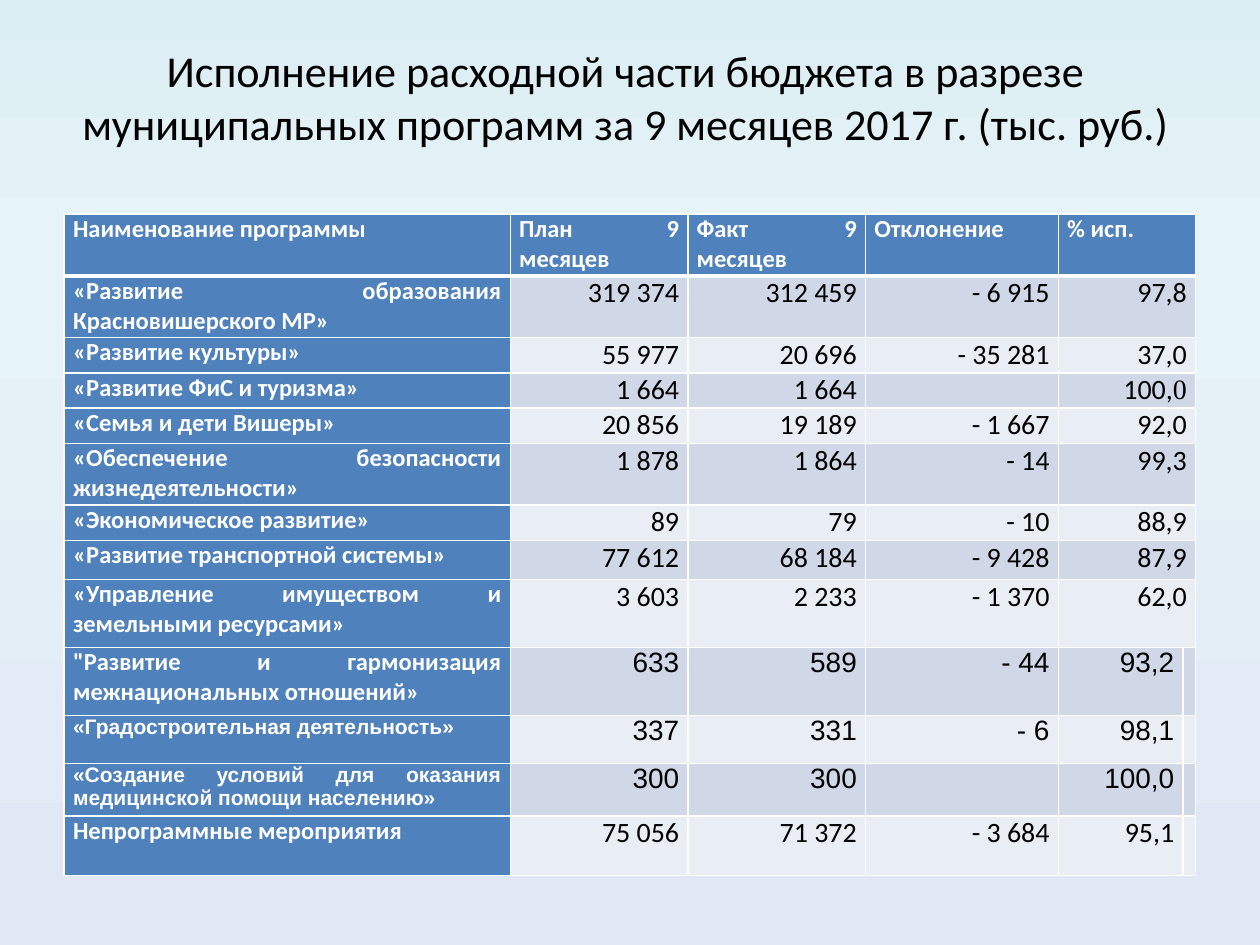
from copy import deepcopy
from pptx import Presentation
from pptx.dml.color import RGBColor
from pptx.enum.text import MSO_ANCHOR, PP_ALIGN
from pptx.oxml import parse_xml
from pptx.oxml.ns import nsdecls, qn
from pptx.util import Inches, Pt

BLUE, WHITE, BLACK = "4F81BD", "FFFFFF", "000000"
BANDS = ["E9EDF4", "D0D8E8"]


def color(value):
    return RGBColor.from_string(value)


def add_border(cell, side, width):
    cell._tc.get_or_add_tcPr().append(parse_xml(
        f'<a:{side} {nsdecls("a")} w="{Pt(width)}"><a:solidFill>'
        f'<a:srgbClr val="{WHITE}"/></a:solidFill></a:{side}>'))


deck = Presentation()
deck.slide_width, deck.slide_height = Inches(10), Inches(7.5)
slide = deck.slides.add_slide(deck.slide_layouts[5])

# Background: three-stop vertical gradient
background = slide.background.fill
background.gradient()
background.gradient_angle = 270
stop_list = slide._element.find(".//" + qn("a:gsLst"))
stop_list.append(deepcopy(stop_list[0]))
stops = [(0, "DBEEF4"), (0.25, "E6F3F7"), (1, "E1E8F5")]
for stop, (position, value) in zip(background.gradient_stops, stops):
    stop.position = position
    stop.color.rgb = color(value)

# Title
title = slide.shapes.title
title.left, title.top = Inches(0.28), Inches(0.3)
title.width, title.height = Inches(9.37), Inches(0.93)
title.text_frame.text = ("Исполнение расходной части бюджета в разрезе "
                         "муниципальных программ за 9 месяцев 2017 г. (тыс. руб.)")
title.text_frame.word_wrap = True
title.text_frame.vertical_anchor = MSO_ANCHOR.MIDDLE
para = title.text_frame.paragraphs[0]
para.alignment = PP_ALIGN.CENTER
font = para.runs[0].font
font.size, font.name, font.color.rgb = Pt(25.2), "Calibri", color(BLACK)

# Table contents: programme, plan, actual, deviation, percent
rows = [
    ["Наименование программы", "План 9 месяцев", "Факт 9 месяцев", "Отклонение", "% исп."],
    ["«Развитие образования Красновишерского МР»", "319 374", "312 459", "- 6 915", "97,8"],
    ["«Развитие культуры»", "55 977", "20 696", "- 35 281", "37,0"],
    ["«Развитие ФиС и туризма»", "1 664", "1 664", "", "100,0"],
    ["«Семья и дети Вишеры»", "20 856", "19 189", "- 1 667", "92,0"],
    ["«Обеспечение безопасности жизнедеятельности»", "1 878", "1 864", "- 14", "99,3"],
    ["«Экономическое развитие»", "89", "79", "- 10", "88,9"],
    ["«Развитие транспортной системы»", "77 612", "68 184", "- 9 428", "87,9"],
    ["«Управление имуществом и земельными ресурсами»", "3 603", "2 233", "- 1 370", "62,0"],
    ['"Развитие и гармонизация межнациональных отношений»', "633", "589", "- 44", "93,2"],
    ["«Градостроительная деятельность»", "337", "331", "- 6", "98,1"],
    ["«Создание условий для оказания медицинской помощи населению»",
     "300", "300", "", "100,0"],
    ["Непрограммные мероприятия", "75 056", "71 372", "- 3 684", "95,1"],
]
column_widths = [3.54, 1.41, 1.41, 1.53, 0.99, 0.1]
row_heights = [0.49, 0.49, 0.28, 0.28, 0.28, 0.49, 0.28, 0.31, 0.54, 0.54, 0.38, 0.42, 0.47]
small_names = (10, 11)
arial_numbers = (9, 10, 11)
first_split_row = 9  # from here on the narrow last column stands apart

table = slide.shapes.add_table(len(rows), len(column_widths), Inches(0.51), Inches(1.7),
                               Inches(8.98), Inches(5.28)).table
for column, width in zip(table.columns, column_widths):
    column.width = Inches(width)
for row, height in zip(table.rows, row_heights):
    row.height = Inches(height)

for r, values in enumerate(rows):
    if r < first_split_row:
        table.cell(r, 4).merge(table.cell(r, 5))
    for c, text in enumerate(values + [""]):
        cell = table.cell(r, c)
        is_label = r == 0 or c == 0

        # Borders, with a heavy rule under the header, then fill
        add_border(cell, "lnL", 1)
        add_border(cell, "lnR", 1)
        add_border(cell, "lnT", 3 if r == 1 else 1)
        add_border(cell, "lnB", 3 if r == 0 else 1)
        cell.fill.solid()
        cell.fill.fore_color.rgb = color(BLUE if is_label else BANDS[r % 2])

        # Text
        cell.margin_left = cell.margin_right = Inches(0 if c == 5 else 0.07)
        cell.margin_top = cell.margin_bottom = 0
        para = cell.text_frame.paragraphs[0]
        para.alignment = PP_ALIGN.JUSTIFY if is_label else PP_ALIGN.RIGHT
        if not text:
            para._p.append(parse_xml(f'<a:endParaRPr {nsdecls("a")} sz="1200"/>'))
            continue
        para.text = text
        font = para.runs[0].font
        if is_label:
            font.size = Pt(12 if r in small_names else 14)
            font.name = "Arial" if r in small_names else "Calibri"
        else:
            font.size = Pt(16)
            font.name = "Arial" if r in arial_numbers else "Calibri"
        font.bold = is_label
        font.color.rgb = color(WHITE if is_label else BLACK)

# The last digit of one percentage is set in a serif face
para = table.cell(3, 4).text_frame.paragraphs[0]
para.runs[0].text = "100,"
span = para.add_run()
span.text = "0"
span.font.size, span.font.name, span.font.bold = Pt(16), "Times New Roman", False
span.font.color.rgb = color(BLACK)

deck.save("out.pptx")
